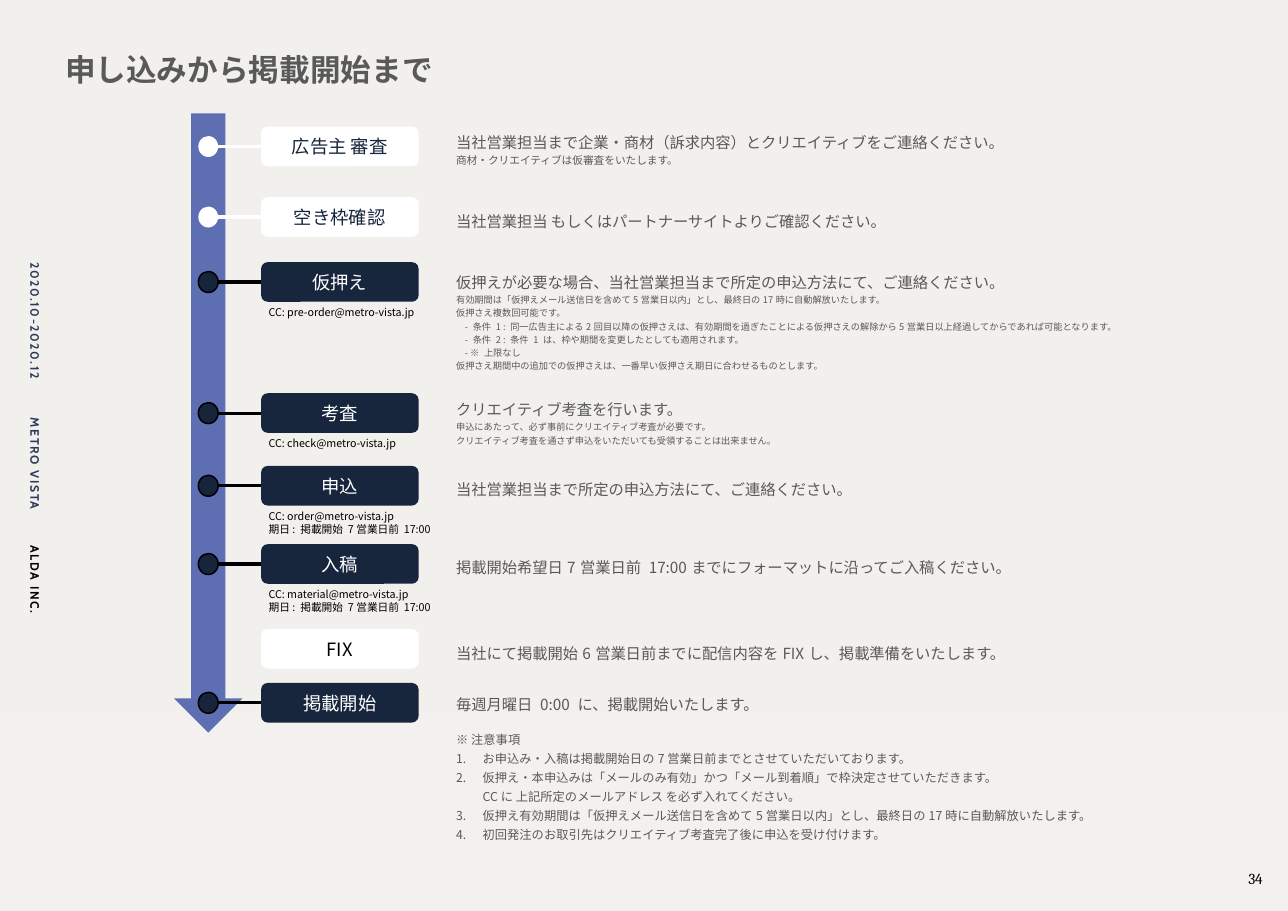
from dataclasses import dataclass

from lxml.etree import SubElement
from pptx import Presentation
from pptx.dml.color import RGBColor
from pptx.enum.shapes import MSO_CONNECTOR, MSO_SHAPE
from pptx.enum.text import MSO_ANCHOR, MSO_AUTO_SIZE, PP_ALIGN
from pptx.oxml.ns import qn
from pptx.util import Inches, Pt


@dataclass(frozen=True)
class Theme:
    font: str = "Noto Sans CJK JP"
    side_font: str = "Cabin"
    number_font: str = "Cambria"
    upper: str = "F2F0EC"
    lower: str = "F3F1EF"
    arrow: str = "5D6EB3"
    dark_pill: str = "17253D"
    navy: str = "16243C"
    side: str = "2B3A5B"
    grey: str = "595959"
    black: str = "000000"
    white: str = "FFFFFF"
    title: float = 20
    pill: float = 12
    body: float = 10
    note: float = 8
    caption: float = 7
    detail: float = 6


THEME = Theme()


@dataclass(frozen=True)
class Step:
    label: str
    top: float
    row_height: float
    text: str
    details: tuple = ()
    detail_size: float = THEME.detail
    caption: str = ""
    dark: bool = True
    dot: bool = True
    label_color: str = THEME.white
    lowered: float = 0  # extra top margin of the table cell


@dataclass(frozen=True)
class SideLabel:
    text: str
    top: float
    color: str


STEPS = (
    Step("広告主 審査", 1.15, 0.65, "当社営業担当まで企業・商材（訴求内容）とクリエイティブをご連絡ください。",
         ("商材・クリエイティブは仮審査をいたします。",), detail_size=THEME.caption,
         dark=False, label_color=THEME.navy),
    Step("空き枠確認", 1.79, 0.65, "当社営業担当 もしくはパートナーサイトよりご確認ください。",
         dark=False, label_color=THEME.navy),
    Step("仮押え", 2.38, 1.18, "仮押えが必要な場合、当社営業担当まで所定の申込方法にて、ご連絡ください。",
         ("有効期間は「仮押えメール送信日を含めて5営業日以内」とし、最終日の17時に自動解放いたします。",
          "仮押さえ複数回可能です。",
          "- 条件 1 : 同一広告主による2回目以降の仮押さえは、有効期間を過ぎたことによる仮押さえの解除から5営業日以上経過してからであれば可能となります。",
          "- 条件 2 : 条件 1 は、枠や期間を変更したとしても適用されます。",
          "- ※ 上限なし",
          "仮押さえ期間中の追加での仮押さえは、一番早い仮押さえ期日に合わせるものとします。"),
         caption="CC: pre-order@metro-vista.jp"),
    Step("考査", 3.57, 0.65, "クリエイティブ考査を行います。",
         ("申込にあたって、必ず事前にクリエイティブ考査が必要です。",
          "クリエイティブ考査を通さず申込をいただいても受領することは出来ません。"),
         caption="CC: check@metro-vista.jp"),
    Step("申込", 4.23, 0.55, "当社営業担当まで所定の申込方法にて、ご連絡ください。",
         caption="CC: order@metro-vista.jp\n期日: 掲載開始 7営業日前 17:00"),
    Step("入稿", 4.94, 0.67, "掲載開始希望日7営業日前 17:00までにフォーマットに沿ってご入稿ください。",
         caption="CC: material@metro-vista.jp\n期日: 掲載開始 7営業日前 17:00", lowered=0.2),
    Step("FIX", 5.71, 0.69, "当社にて掲載開始6営業日前までに配信内容をFIXし、掲載準備をいたします。",
         dark=False, dot=False, label_color=THEME.black, lowered=0.4),
    Step("掲載開始", 6.2, 0.65, "毎週月曜日 0:00 に、掲載開始いたします。"),
)
SIDE_LABELS = (
    SideLabel("2020.10-2020.12", 2.79, THEME.side),
    SideLabel("METRO VISTA", 4.09, THEME.side),
    SideLabel("ALDA INC.", 5.14, THEME.black),
)
NOTES = (
    "※ 注意事項",
    "お申込み・入稿は掲載開始日の7営業日前までとさせていただいております。",
    "仮押え・本申込みは「メールのみ有効」かつ「メール到着順」で枠決定させていただきます。\n"
    "CCに 上記所定のメールアドレス を必ず入れてください。",
    "仮押え有効期間は「仮押えメール送信日を含めて5営業日以内」とし、最終日の17時に自動解放いたします。",
    "初回発注のお取引先はクリエイティブ考査完了後に申込を受け付けます。",
)
PILL_LEFT, PILL_WIDTH, PILL_HEIGHT = 2.37, 1.43, 0.36
DOT_LEFT, DOT_WIDTH, DOT_HEIGHT = 1.8, 0.18, 0.19
NO_GRID_STYLE = "{2D5ABB26-0587-4C30-8999-92F81FD0307C}"


def write(paragraph, text: str, size: float, color: str, font: str = THEME.font,
          bold: bool = False, align=PP_ALIGN.LEFT, tracking: int = 0) -> None:
    """Fill one paragraph and format it, East Asian typeface included."""
    paragraph.text = text
    paragraph.alignment = align
    paragraph.font.size = Pt(size)
    paragraph.font.bold = bold
    paragraph.font.name = font
    paragraph.font.color.rgb = RGBColor.from_string(color)
    properties = paragraph._p.pPr.find(qn("a:defRPr"))
    SubElement(properties, qn("a:ea")).set("typeface", font)
    if tracking:
        properties.set("spc", str(tracking))


def place(shape, left: float, top: float, width: float, height: float) -> None:
    shape.left, shape.top = Inches(left), Inches(top)
    shape.width, shape.height = Inches(width), Inches(height)


def add_text(slide, left: float, top: float, width: float, height: float,
             text: str, size: float, color: str, **formatting):
    box = slide.shapes.add_textbox(Inches(left), Inches(top), Inches(width), Inches(height))
    box.text_frame.word_wrap = True
    write(box.text_frame.paragraphs[0], text, size, color, **formatting)
    return box


def add_filled(slide, kind, left: float, top: float, width: float, height: float,
               fill: str, outline: str = ""):
    shape = slide.shapes.add_shape(kind, Inches(left), Inches(top), Inches(width), Inches(height))
    shape.shadow.inherit = False
    shape.fill.solid()
    shape.fill.fore_color.rgb = RGBColor.from_string(fill)
    if outline:
        shape.line.color.rgb = RGBColor.from_string(outline)
        shape.line.width = Pt(1)
    else:
        shape.line.fill.background()
    return shape


def add_step(slide, step: Step) -> None:
    """Draw the pill of a step with its dot, connector and caption."""
    pill = add_filled(slide, MSO_SHAPE.ROUNDED_RECTANGLE, PILL_LEFT, step.top, PILL_WIDTH,
                      PILL_HEIGHT, THEME.dark_pill if step.dark else THEME.white)
    pill.text_frame.vertical_anchor = MSO_ANCHOR.MIDDLE
    write(pill.text_frame.paragraphs[0], step.label, THEME.pill, step.label_color,
          align=PP_ALIGN.CENTER)
    if step.dot:
        middle = step.top + PILL_HEIGHT / 2
        add_filled(slide, MSO_SHAPE.OVAL, DOT_LEFT, middle - DOT_HEIGHT / 2, DOT_WIDTH, DOT_HEIGHT,
                   THEME.navy if step.dark else THEME.white, THEME.black if step.dark else "")
        line = slide.shapes.add_connector(MSO_CONNECTOR.STRAIGHT, Inches(DOT_LEFT + DOT_WIDTH),
                                          Inches(middle), Inches(PILL_LEFT), Inches(middle))
        line.line.color.rgb = RGBColor.from_string(THEME.black if step.dark else THEME.white)
        line.line.width = Pt(2)
        SubElement(line._element.spPr, qn("a:effectLst"))
    if step.caption:
        add_text(slide, 2.34, step.top + 0.35, 1.7, 0.34, step.caption, THEME.caption, THEME.black)


def add_descriptions(slide) -> None:
    height = sum(step.row_height for step in STEPS)
    frame = slide.shapes.add_table(len(STEPS), 2, Inches(2.09), Inches(1.03),
                                   Inches(8.76), Inches(height))
    table = frame.table
    table.first_row = table.horz_banding = False
    table._tbl.tblPr.find(qn("a:tableStyleId")).text = NO_GRID_STYLE
    table.columns[0].width, table.columns[1].width = Inches(1.97), Inches(6.79)
    for index, step in enumerate(STEPS):
        table.rows[index].height = Inches(step.row_height)
        for column in range(2):
            table.cell(index, column).fill.background()
        cell = table.cell(index, 1)
        cell.vertical_anchor = MSO_ANCHOR.MIDDLE
        cell.margin_left = cell.margin_right = Inches(0.08)
        cell.margin_top, cell.margin_bottom = Inches(0.04 + step.lowered), Inches(0.04)
        write(cell.text_frame.paragraphs[0], step.text, THEME.body, THEME.grey)
        for detail in step.details:
            paragraph = cell.text_frame.add_paragraph()
            if detail.startswith("-"):
                paragraph._p.get_or_add_pPr().set("marL", str(Inches(0.08)))
            write(paragraph, detail, step.detail_size, THEME.grey)


def fill_notes(body) -> None:
    place(body, 4.04, 6.56, 7.11, 1.14)
    frame = body.text_frame
    frame.auto_size = MSO_AUTO_SIZE.NONE
    for index, note in enumerate(NOTES):
        paragraph = frame.add_paragraph() if index else frame.paragraphs[0]
        paragraph.line_spacing, paragraph.space_before = 1.3, Pt(0)
        indent = Inches(0.24) if index else 0
        properties = paragraph._p.get_or_add_pPr()
        properties.set("marL", str(indent))
        properties.set("indent", str(-indent))
        if index:
            SubElement(properties, qn("a:buAutoNum")).set("type", "arabicPeriod")
        else:
            SubElement(properties, qn("a:buNone"))
        write(paragraph, note, THEME.note, THEME.grey)


def main() -> None:
    presentation = Presentation()
    presentation.slide_width, presentation.slide_height = Inches(11.69), Inches(8.27)
    slide = presentation.slides.add_slide(presentation.slide_layouts[1])
    slide.background.fill.solid()
    slide.background.fill.fore_color.rgb = RGBColor.from_string(THEME.upper)
    band = add_filled(slide, MSO_SHAPE.RECTANGLE, 0, 6.49, 11.69, 1.78, THEME.lower)
    slide.shapes._spTree.insert(2, band._element)  # behind the placeholders

    title = slide.shapes.title
    place(title, 0.49, 0.45, 4.19, 0.58)
    title.text_frame.auto_size = MSO_AUTO_SIZE.NONE
    title.text_frame.vertical_anchor = MSO_ANCHOR.TOP
    title.text_frame.paragraphs[0].line_spacing = 0.9
    write(title.text_frame.paragraphs[0], "申し込みから掲載開始まで", THEME.title, THEME.grey, bold=True)
    fill_notes(slide.placeholders[1])

    for label in SIDE_LABELS:
        box = add_text(slide, -0.4, label.top, 1.43, 0.24, label.text, THEME.note, label.color,
                       font=THEME.side_font, bold=True, align=PP_ALIGN.CENTER, tracking=100)
        box.rotation = 90
    add_text(slide, 8.93, 7.84, 2.63, 0.44, "34", THEME.body, THEME.black,
             font=THEME.number_font, align=PP_ALIGN.RIGHT)

    add_descriptions(slide)
    add_filled(slide, MSO_SHAPE.DOWN_ARROW, 1.58, 1.03, 0.62, 5.62, THEME.arrow)
    for step in STEPS:
        add_step(slide, step)
    presentation.save("out.pptx")


if __name__ == "__main__":
    main()
